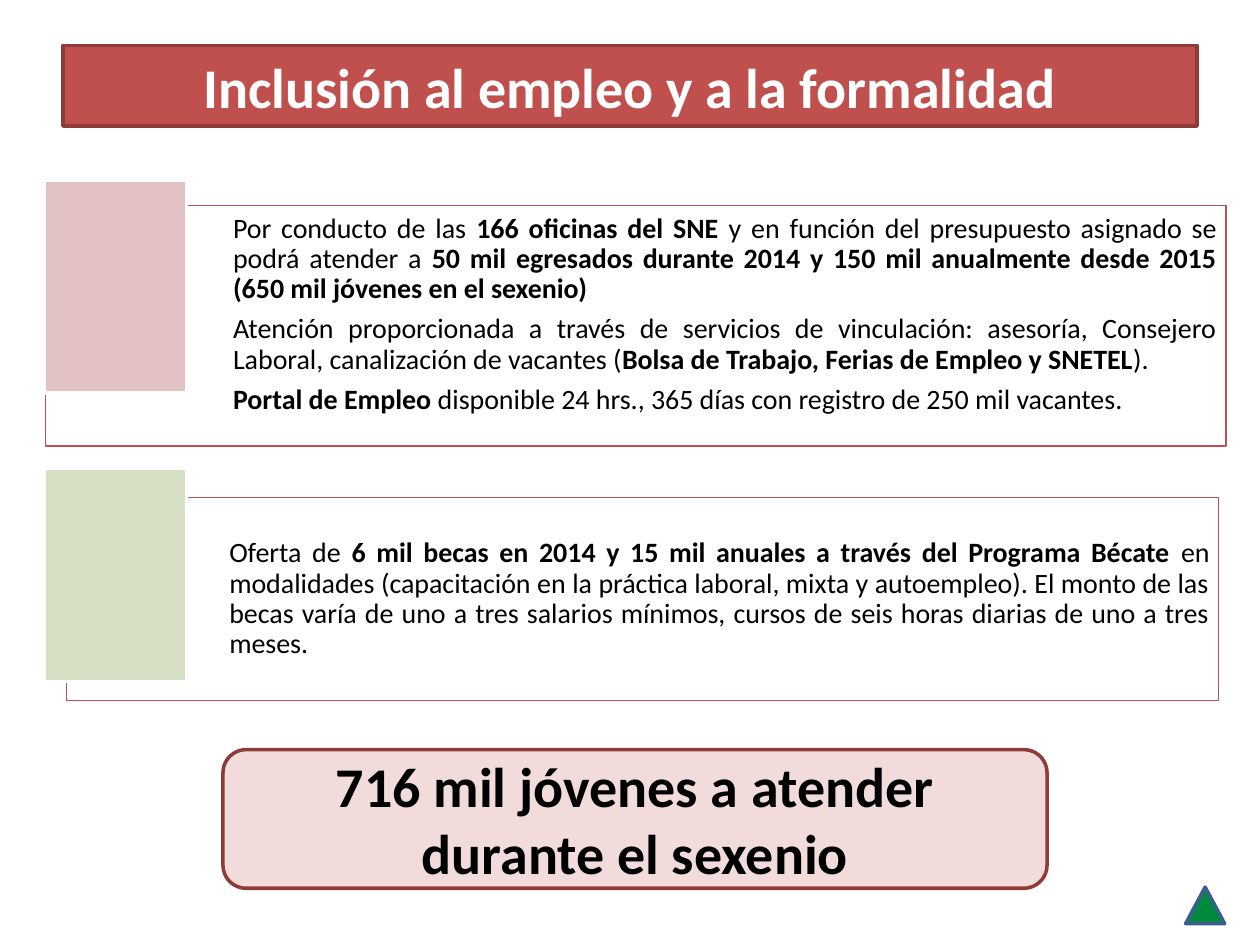
from pptx import Presentation
from pptx.dml.color import RGBColor
from pptx.enum.shapes import MSO_SHAPE
from pptx.enum.text import MSO_ANCHOR, PP_ALIGN
from pptx.util import Inches, Pt

RED, DARK_RED, WHITE, BLACK = "C0504D", "8E3B39", "FFFFFF", "000000"

# Each paragraph is a list of (text, bold) spans
OFFICES = [
    [("Por conducto de las ", False),
     ("166 oficinas del SNE ", True),
     ("y en función del presupuesto asignado se podrá atender a ", False),
     ("50 mil egresados durante 2014 y 150 mil anualmente desde 2015 "
      "(650 mil jóvenes en el sexenio)", True)],
    [("Atención proporcionada a través de servicios de vinculación: asesoría, "
      "Consejero Laboral, canalización de vacantes (", False),
     ("Bolsa de Trabajo, Ferias de Empleo y SNETEL", True),
     (").", False)],
    [("Portal de Empleo ", True),
     ("disponible 24 hrs., 365 días con registro de 250 mil vacantes.", False)],
]
GRANTS = [
    [("Oferta de ", False),
     ("6 mil becas en 2014 y 15 mil anuales a través del Programa Bécate ", True),
     ("en modalidades (capacitación en la práctica laboral, mixta y autoempleo). "
      "El monto de las becas varía de uno a tres salarios mínimos, cursos de seis "
      "horas diarias de uno a tres meses.", False)],
]


def color(value):
    return RGBColor.from_string(value)


def paint(shape, fill, line, width):
    shape.fill.solid()
    shape.fill.fore_color.rgb = color(fill)
    shape.line.color.rgb = color(line)
    shape.line.width = Pt(width)


def set_font(para, size, value, bold=None):
    para.font.name = "Calibri"
    para.font.size = Pt(size)
    para.font.color.rgb = color(value)
    para.font.bold = bold


def add_box(page, kind, box, fill, line, width=2):
    shape = page.shapes.add_shape(kind, *map(Inches, box))
    shape.shadow.inherit = False
    paint(shape, fill, line, width)
    return shape


def write_heading(shape, text, value):
    frame = shape.text_frame
    frame.word_wrap = True
    frame.vertical_anchor = MSO_ANCHOR.MIDDLE
    frame.text = text
    para = frame.paragraphs[0]
    para.alignment = PP_ALIGN.CENTER
    set_font(para, 32, value, True)


def place_title(page, box, text):
    title = page.shapes.title
    title.left, title.top, title.width, title.height = map(Inches, box)
    paint(title, RED, DARK_RED, 2)
    write_heading(title, text, WHITE)


def add_panel(page, box, tile_top, tile_fill, text_inset, anchor, paragraphs):
    # Outlined panel with its text
    panel = add_box(page, MSO_SHAPE.RECTANGLE, box, WHITE, RED, 0.75)
    frame = panel.text_frame
    frame.word_wrap = True
    frame.vertical_anchor = anchor
    frame.margin_left = Inches(text_inset)
    frame.margin_top = frame.margin_right = frame.margin_bottom = Inches(0.07)
    for index, spans in enumerate(paragraphs):
        para = frame.add_paragraph() if index else frame.paragraphs[0]
        para.alignment = PP_ALIGN.JUSTIFY
        para.line_spacing = 0.9
        para.space_after = Pt(5.6)
        set_font(para, 16, BLACK)
        for text, bold in spans:
            span = para.add_run()
            span.text = text
            span.font.bold = bold
    # Coloured tile over the left edge
    add_box(page, MSO_SHAPE.RECTANGLE, (0.35, tile_top, 1.13, 1.69), tile_fill, WHITE)


def add_conclusion(page, box, text):
    shape = add_box(page, MSO_SHAPE.ROUNDED_RECTANGLE, box, "F2DCDB", DARK_RED)
    write_heading(shape, text, BLACK)


def main():
    deck = Presentation()
    deck.slide_width, deck.slide_height = Inches(10), Inches(7.5)
    page = deck.slides.add_slide(deck.slide_layouts[5])

    place_title(page, (0.5, 0.36, 9, 0.64), "Inclusión al empleo y a la formalidad")
    add_panel(page, (0.36, 1.63, 9.37, 1.91), 1.43, "E2C2C2", 1.49,
              MSO_ANCHOR.TOP, OFFICES)
    add_panel(page, (0.53, 3.95, 9.14, 1.61), 3.72, "D5E0C4", 1.29,
              MSO_ANCHOR.MIDDLE, GRANTS)
    add_conclusion(page, (1.77, 5.95, 6.54, 1.1),
                   "716 mil jóvenes a atender durante el sexenio")
    # Corner marker
    add_box(page, MSO_SHAPE.ISOSCELES_TRIANGLE, (9.41, 7.04, 0.31, 0.29),
            "008A3E", "3A5F8C")

    deck.save("out.pptx")


if __name__ == "__main__":
    main()
